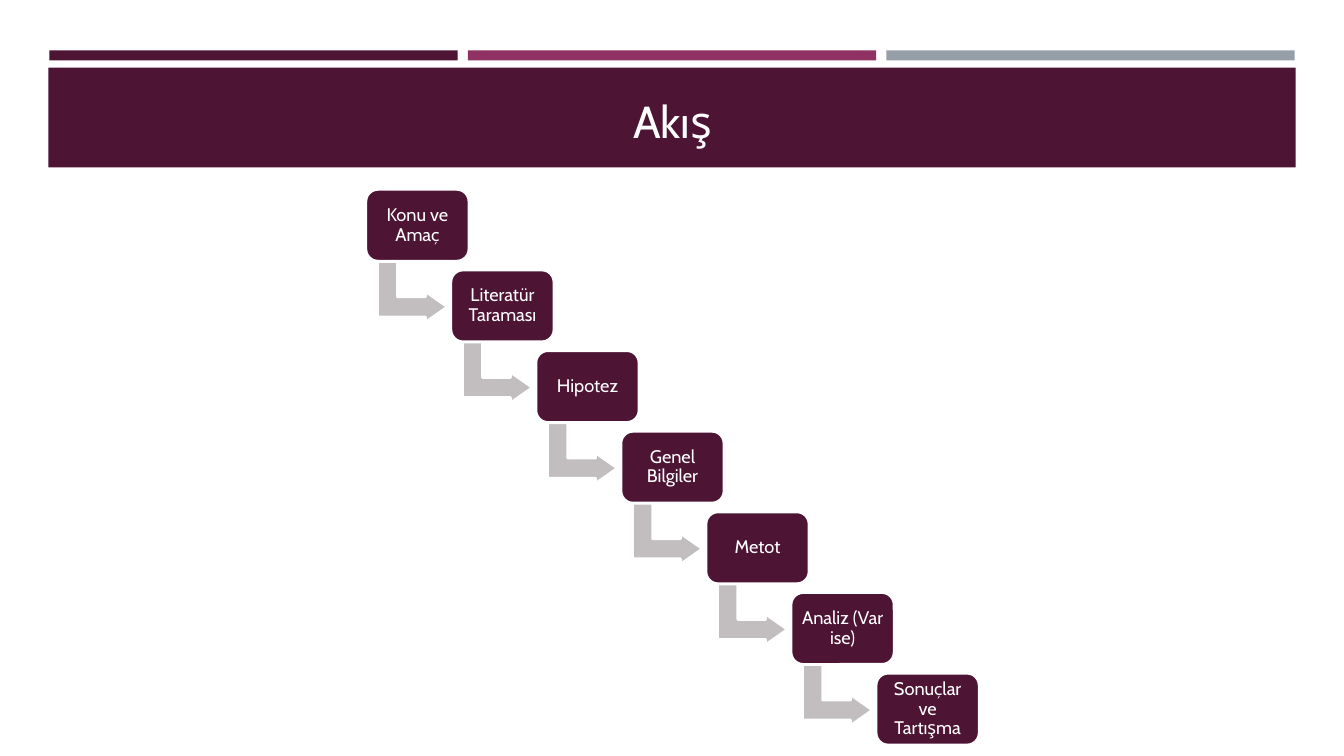
from pptx import Presentation
from pptx.dml.color import RGBColor
from pptx.enum.shapes import MSO_SHAPE as Shape
from pptx.enum.text import MSO_ANCHOR as Anchor, PP_ALIGN as Align
from pptx.util import Inches, Pt

TITLE = "Akış"
STEPS = ["Konu ve Amaç", "Literatür Taraması", "Hipotez", "Genel Bilgiler",
         "Metot", "Analiz (Var ise)", "Sonuçlar ve Tartışma"]
COLORS = {"plum": "4D1434", "berry": "903163", "steel": "969FA7",
          "arrow": "C2BDBF", "white": "FFFFFF"}
STRIPES = ["plum", "berry", "steel"]
FONT = "Cabin"

FIRST, LAST = (3.63, 1.88), (8.69, 6.68)  # top left of the end steps
STEP_W, STEP_H = 1.02, 0.71
ARROW_W, ARROW_H = 0.6, 0.69
ARROW_DX, ARROW_DY = 0.16, 0.67  # arrow offset from its step


def color(name):
    return RGBColor.from_string(COLORS[name])


def add_box(slide, kind, x, y, w, h, fill, line=None, adjust=()):
    box = slide.shapes.add_shape(kind, Inches(x), Inches(y), Inches(w), Inches(h))
    box.shadow.inherit = False
    box.fill.solid()
    box.fill.fore_color.rgb = color(fill)
    if line:
        box.line.color.rgb = color(line)
        box.line.width = Pt(1.75)
    else:
        box.line.fill.background()
    for i, value in enumerate(adjust):
        box.adjustments[i] = value
    return box


def write(box, text, size, inset=(0.1, 0.05), spacing=1.0):
    frame = box.text_frame
    frame.word_wrap = True
    frame.vertical_anchor = Anchor.MIDDLE
    frame.margin_left = frame.margin_right = Inches(inset[0])
    frame.margin_top = frame.margin_bottom = Inches(inset[1])
    para = frame.paragraphs[0]
    para.alignment = Align.CENTER
    para.line_spacing = spacing
    run = para.add_run()
    run.text = text
    run.font.size = Pt(size)
    run.font.name = FONT
    run.font.color.rgb = color("white")


def add_header(slide):
    for i, fill in enumerate(STRIPES):
        add_box(slide, Shape.RECTANGLE, 0.49 + i * 4.15, 0.5, 4.05, 0.1, fill)
    add_box(slide, Shape.RECTANGLE, 0.48, 0.67, 12.37, 0.99, "plum")
    title = slide.shapes.add_textbox(Inches(0.64), Inches(0.77),
                                     Inches(12.06), Inches(0.85))
    write(title, TITLE, 32)


def add_steps(slide):
    last = len(STEPS) - 1
    dx, dy = ((end - start) / last for start, end in zip(FIRST, LAST))
    for i, text in enumerate(STEPS):
        x, y = FIRST[0] + i * dx, FIRST[1] + i * dy
        if i < last:
            arrow = add_box(slide, Shape.BENT_UP_ARROW, x + ARROW_DX, y + ARROW_DY,
                            ARROW_W, ARROW_H, "arrow", "white", (0.328, 0.25, 0.358))
            arrow.rotation = 90
        step = add_box(slide, Shape.ROUNDED_RECTANGLE, x, y, STEP_W, STEP_H,
                       "plum", "white", (0.167,))
        write(step, text, 13, inset=(0.05, 0.05), spacing=0.9)


def main():
    deck = Presentation()
    deck.slide_width, deck.slide_height = Inches(13.33), Inches(7.5)
    slide = deck.slides.add_slide(deck.slide_layouts[6])
    add_header(slide)
    add_steps(slide)
    deck.save("out.pptx")


if __name__ == "__main__":
    main()
